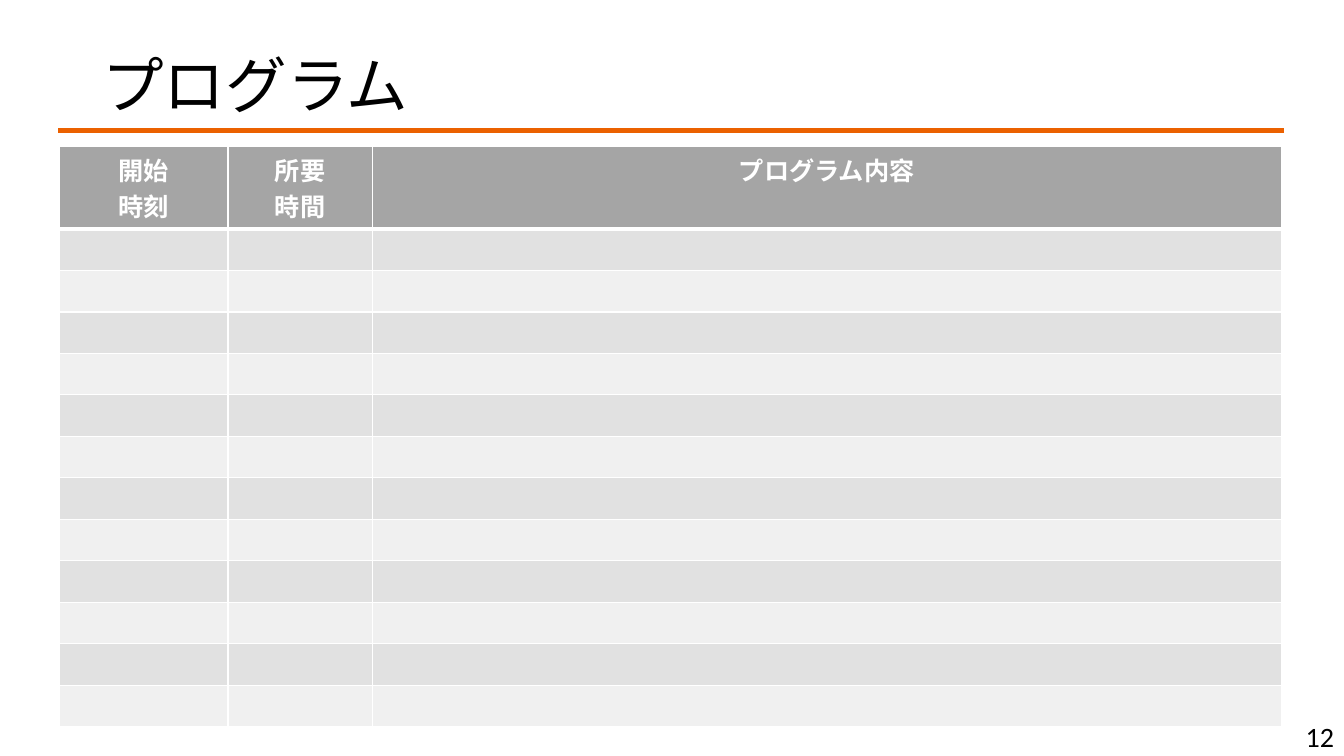
import pptx
import pptx.dml.color
import pptx.enum.shapes
import pptx.enum.text
import pptx.oxml
import pptx.oxml.ns
import pptx.util
from lxml import etree

Pt = pptx.util.Pt
ALIGN = pptx.enum.text.PP_ALIGN
ANCHOR = pptx.enum.text.MSO_ANCHOR
JAPANESE = "Noto Sans CJK JP"
BORDER_SIDES = ("lnL", "lnR", "lnT", "lnB")


def color(code):
    return pptx.dml.color.RGBColor.from_string(code)


def write_text(frame, text, font=JAPANESE, size=18, ink="000000", bold=False,
               align=ALIGN.LEFT, spacing=None):
    for index, line in enumerate(text.split("\n")):
        para = frame.add_paragraph() if index else frame.paragraphs[0]
        para.alignment = align
        if spacing:
            para.line_spacing = spacing
        span = para.add_run()
        span.text = line
        span.font.name = font
        span.font.size = Pt(size)
        span.font.bold = bold
        span.font.color.rgb = color(ink)
        east = etree.SubElement(span.font._element, pptx.oxml.ns.qn("a:ea"))
        east.set("typeface", font)


class ProgramSlide:
    """Hold the colours of the programme slide and draw its elements."""

    accent = "EB6100"
    header = "A5A5A5"
    bands = ("E1E1E1", "F0F0F0")
    grid = "FFFFFF"

    def __init__(self, page):
        self.page = page

    def rule(self, left, right, top, width):
        line = self.page.shapes.add_connector(
            pptx.enum.shapes.MSO_CONNECTOR.STRAIGHT, Pt(left), Pt(top), Pt(right), Pt(top))
        line.line.color.rgb = color(self.accent)
        line.line.width = Pt(width)
        etree.SubElement(line._element.spPr, pptx.oxml.ns.qn("a:effectLst"))

    def label(self, text, left, top, width, height, **style):
        box = self.page.shapes.add_textbox(Pt(left), Pt(top), Pt(width), Pt(height))
        box.text_frame.word_wrap = True
        box.text_frame.vertical_anchor = ANCHOR.MIDDLE
        write_text(box.text_frame, text, **style)

    def border(self, cell, side, width):
        properties = cell._tc.get_or_add_tcPr()
        edge = etree.SubElement(properties, pptx.oxml.ns.qn("a:" + side), w=str(Pt(width)))
        fill = etree.SubElement(edge, pptx.oxml.ns.qn("a:solidFill"))
        etree.SubElement(fill, pptx.oxml.ns.qn("a:srgbClr"), val=self.grid)

    def schedule(self, headings, left, top, widths, heights):
        frame = self.page.shapes.add_table(
            len(heights), len(widths), Pt(left), Pt(top), Pt(sum(widths)), Pt(sum(heights)))
        table = frame.table
        table.first_row = table.horz_banding = False
        for column, width in zip(table.columns, widths):
            column.width = Pt(width)
        for row, height in zip(table.rows, heights):
            row.height = Pt(height)
        for row_index, row in enumerate(table.rows):
            heavy = {0: "lnB", 1: "lnT"}.get(row_index)
            shade = self.bands[(row_index - 1) % 2] if row_index else self.header
            for cell in row.cells:
                for side in BORDER_SIDES:
                    self.border(cell, side, 3 if side == heavy else 1)
                cell.fill.solid()
                cell.fill.fore_color.rgb = color(shade)
        for cell, heading in zip(table.rows[0].cells, headings):
            write_text(cell.text_frame, heading, ink="FFFFFF", bold=True, align=ALIGN.CENTER)


def main():
    deck = pptx.Presentation()
    deck.slide_width, deck.slide_height = Pt(960), Pt(540)
    slide = ProgramSlide(deck.slides.add_slide(deck.slide_layouts[6]))
    slide.rule(41.6, 917.3, 93.1, 4)
    slide.label("プログラム", 66, 10.8, 828, 104.4, size=44, spacing=0.9)
    slide.schedule(("開始\n時刻", "所要\n時間", "プログラム内容"), 42.6, 104.3,
                   (120.3, 103, 649.4), [59.3] + [29.65] * 12)
    slide.label("12", 744, 511.2, 216, 28.8, font="Calibri", size=20, align=ALIGN.RIGHT)
    deck.save("out.pptx")


if __name__ == "__main__":
    main()
